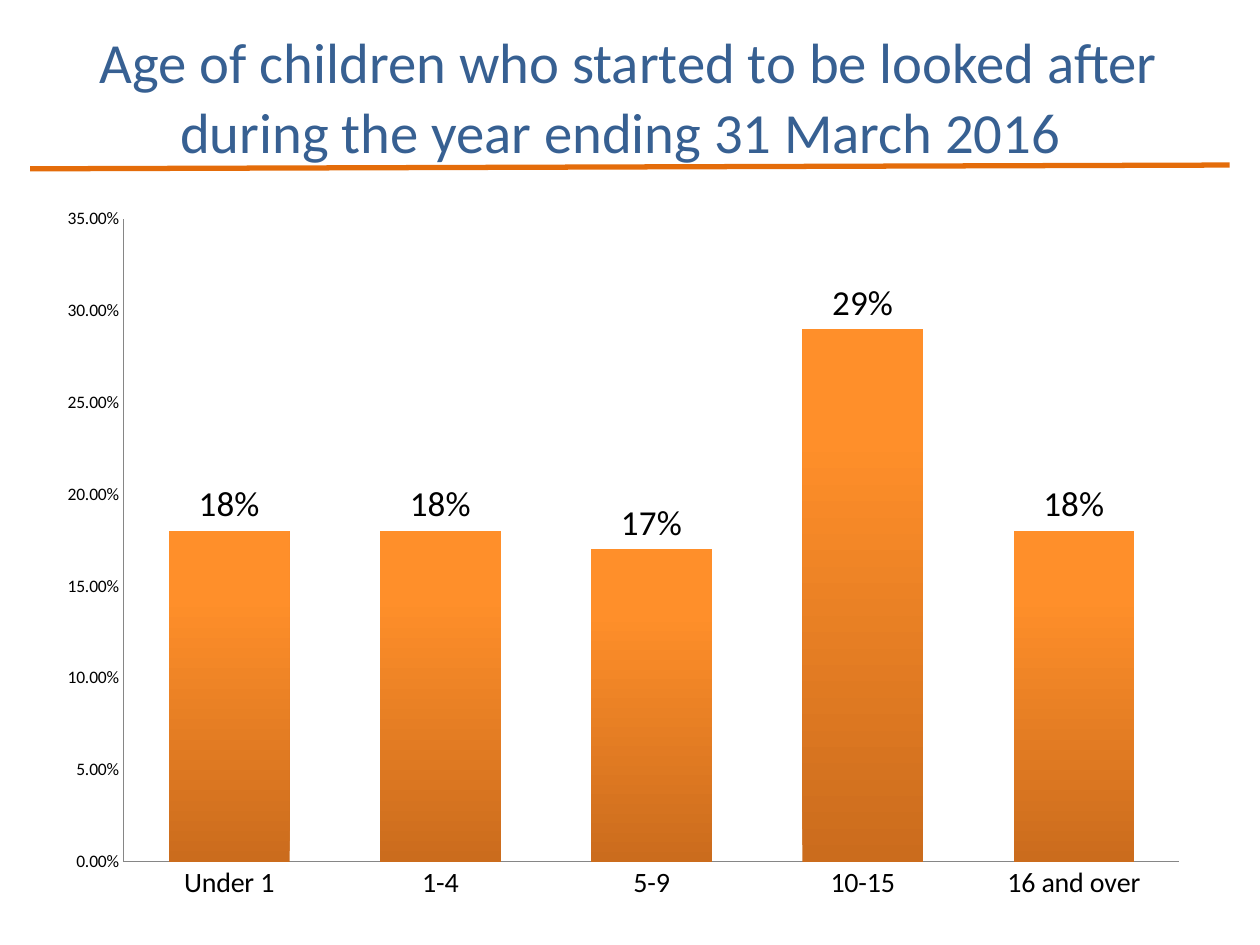
from lxml.etree import SubElement
from pptx import Presentation
from pptx.chart.data import CategoryChartData
from pptx.dml.color import RGBColor
from pptx.enum.chart import XL_CHART_TYPE, XL_LABEL_POSITION, XL_TICK_MARK
from pptx.enum.shapes import MSO_CONNECTOR
from pptx.enum.text import MSO_ANCHOR, MSO_AUTO_SIZE, PP_ALIGN
from pptx.oxml import parse_xml
from pptx.oxml.ns import nsdecls, qn
from pptx.util import Inches, Pt

BLACK = RGBColor(0x00, 0x00, 0x00)
BLUE = RGBColor(0x37, 0x60, 0x92)
ORANGE = RGBColor(0xE4, 0x6C, 0x0A)
AXIS_GREY = RGBColor(0x86, 0x86, 0x86)
BAR_STOPS = [(0, RGBColor(0xCB, 0x6C, 0x1D)), (0.8, RGBColor(0xFF, 0x8F, 0x2A))]

HEADING = [
    (" ", 39.6, BLACK),
    ("Age of children who started to be looked after during the year ending 31 March 2016", 32.4, BLUE),
]
AGE_SHARES = {"Under 1": 0.18, "1-4": 0.18, "5-9": 0.17, "10-15": 0.29, "16 and over": 0.18}

HEADING_BOX = (0.12, 0, 9.61, 1.42)
RULE_ENDS = (0.24, 1.34, 9.76, 1.31)
CHART_BOX = (0.35, 1.47, 9.29, 5.83)
PLOT_SHARES = {"x": 0.068, "y": 0.046, "w": 0.902, "h": 0.875}


def apply(target, values):
    for name, value in values.items():
        setattr(target, name, value)


def inches(values):
    return [Inches(value) for value in values]


def style_font(font, size, color):
    apply(font, {"name": "Calibri", "size": Pt(size)})
    font.color.rgb = color


def add_heading(slide):
    heading = slide.shapes.title
    apply(heading, dict(zip(("left", "top", "width", "height"), inches(HEADING_BOX))))
    apply(heading.text_frame, {"word_wrap": True, "auto_size": MSO_AUTO_SIZE.NONE,
                               "vertical_anchor": MSO_ANCHOR.MIDDLE})
    paragraph = heading.text_frame.paragraphs[0]
    paragraph.alignment = PP_ALIGN.CENTER
    for words, size, color in HEADING:
        run = paragraph.add_run()
        run.text = words
        style_font(run.font, size, color)


def add_rule(slide):
    rule = slide.shapes.add_connector(MSO_CONNECTOR.STRAIGHT, *inches(RULE_ENDS))
    rule.line.width = Pt(3)
    rule.line.color.rgb = ORANGE
    SubElement(rule._element.spPr, qn("a:effectLst"))


def place_plot(chart):
    plot_area = chart._chartSpace.chart.plotArea
    for old_layout in plot_area.findall(qn("c:layout")):
        plot_area.remove(old_layout)
    modes = "".join(f'<c:{side}Mode val="edge"/>' for side in "xy")
    shares = "".join(f'<c:{key} val="{share}"/>' for key, share in PLOT_SHARES.items())
    plot_area.insert(0, parse_xml(
        f'<c:layout {nsdecls("c")}><c:manualLayout><c:layoutTarget val="inner"/>'
        f"{modes}{shares}</c:manualLayout></c:layout>"))


def add_age_chart(slide):
    ages = CategoryChartData(number_format="0.00%")
    ages.categories = list(AGE_SHARES)
    ages.add_series("Series 1", list(AGE_SHARES.values()))
    chart = slide.shapes.add_chart(
        XL_CHART_TYPE.COLUMN_CLUSTERED, *inches(CHART_BOX), ages).chart
    apply(chart, {"has_legend": False, "has_title": False})
    style_font(chart.font, 10, BLACK)
    place_plot(chart)

    for axis, size in ((chart.category_axis, 16), (chart.value_axis, 10)):
        apply(axis, {"major_tick_mark": XL_TICK_MARK.NONE, "minor_tick_mark": XL_TICK_MARK.NONE,
                     "has_major_gridlines": False})
        style_font(axis.tick_labels.font, size, BLACK)
        axis.format.line.color.rgb = AXIS_GREY
        axis.format.line.width = Pt(0.75)
    apply(chart.value_axis, {"minimum_scale": 0, "maximum_scale": 0.35, "major_unit": 0.05})
    apply(chart.value_axis.tick_labels, {"number_format": "0.00%", "number_format_is_linked": False})

    plot = chart.plots[0]
    apply(plot, {"gap_width": 75, "vary_by_categories": False, "has_data_labels": True})
    apply(plot.data_labels, {"show_value": True, "number_format": "0%", "number_format_is_linked": False,
                             "position": XL_LABEL_POSITION.OUTSIDE_END})
    style_font(plot.data_labels.font, 20, BLACK)

    bars = plot.series[0]
    bars.invert_if_negative = False
    bars.format.line.fill.background()
    bar_fill = bars.format.fill
    bar_fill.gradient()
    bar_fill.gradient_angle = 90
    for stop, (position, color) in zip(bar_fill.gradient_stops, BAR_STOPS):
        stop.position = position
        stop.color.rgb = color


def main():
    deck = Presentation()
    apply(deck, {"slide_width": Inches(10), "slide_height": Inches(7.5)})
    slide = deck.slides.add_slide(deck.slide_layouts.get_by_name("Title Only"))
    add_rule(slide)
    add_heading(slide)
    add_age_chart(slide)
    deck.save("out.pptx")


if __name__ == "__main__":
    main()
